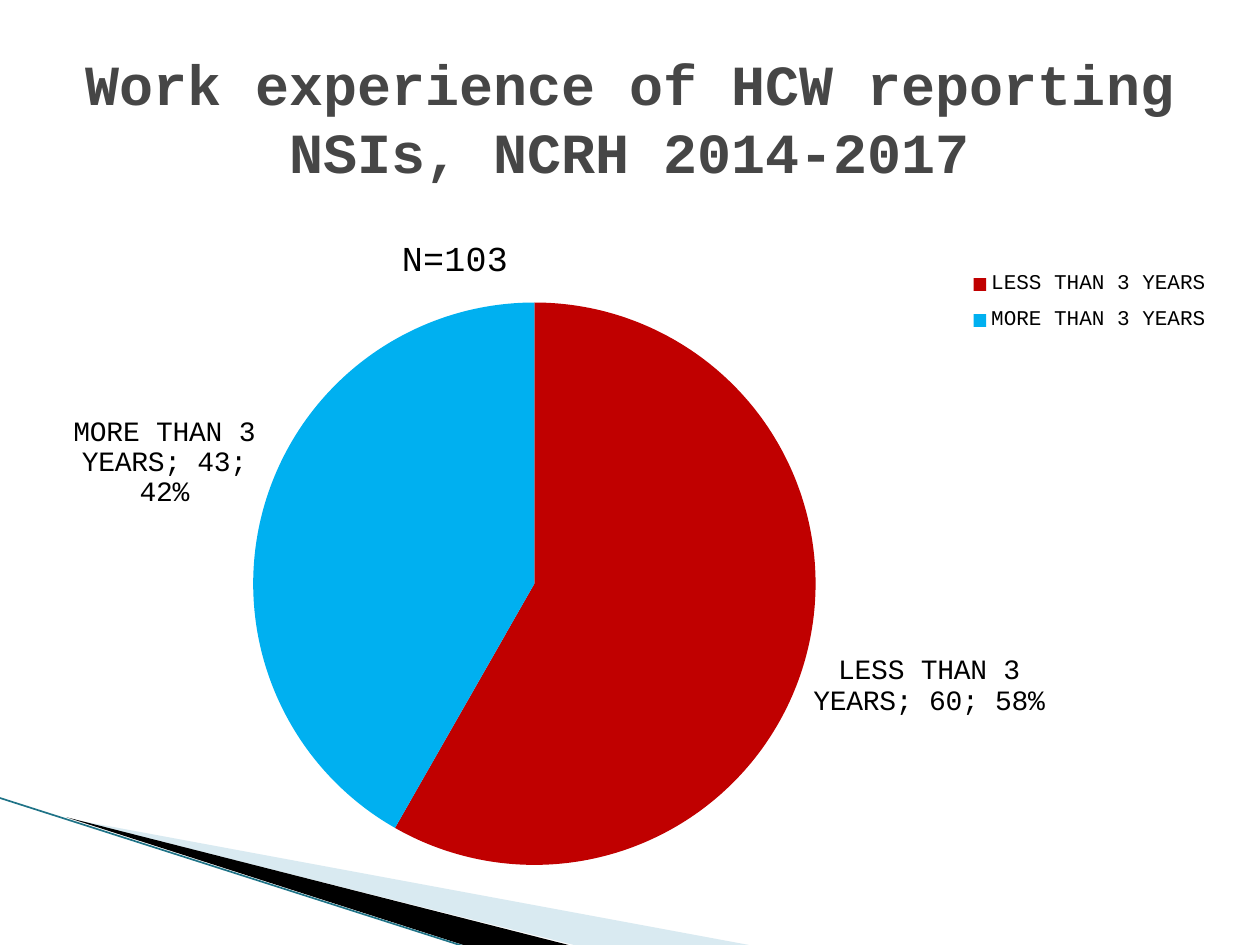
"""Builds a slide with a pie chart of work experience among reporting staff."""
from lxml import etree
from pptx import Presentation
from pptx import util as u
from pptx.chart.data import CategoryChartData
from pptx.dml.color import RGBColor
from pptx.enum import chart as ch, shapes, text
from pptx.oxml import parse_xml
from pptx.oxml.ns import nsdecls, qn

FONT = "Courier New"
COLORS = {
    "title": "464646",
    "text": "000000",
    "less": "C00000",
    "more": "00B0F0",
    "pale": "A0CBDC",
    "dark": "000000",
    "edge": "1F7387",
}


def rgb(name):
    return RGBColor.from_string(COLORS[name])


def set_font(font, size, color="text", bold=False):
    font.name, font.size, font.bold = FONT, u.Pt(size), bold
    font.color.rgb = rgb(color)


def add_wedge(s, points, color, alpha=None):
    builder = s.shapes.build_freeform(*points[0], scale=u.Pt(1))
    builder.add_line_segments(points[1:], close=True)
    sp = builder.convert_to_shape()
    sp.shadow.inherit = False
    sp.fill.solid()
    sp.fill.fore_color.rgb = rgb(color)
    sp.line.fill.background()
    if alpha:
        clr = sp._element.spPr.find(".//" + qn("a:srgbClr"))
        etree.SubElement(clr, qn("a:alpha")).set("val", str(alpha * 1000))


def add_edge(s, start, end):
    line = s.shapes.add_connector(
        shapes.MSO_CONNECTOR.STRAIGHT, *map(u.Pt, start + end))
    line.line.color.rgb = rgb("edge")
    line.line.width = u.Pt(0.95)
    etree.SubElement(line._element.spPr, qn("a:effectLst"))


def add_title(s, wording):
    tf = s.shapes.add_textbox(*map(u.Pt, (36, 21.6, 648, 90))).text_frame
    tf.word_wrap = True
    tf.vertical_anchor = text.MSO_ANCHOR.MIDDLE
    p = tf.paragraphs[0]
    p.text = wording
    p.alignment = text.PP_ALIGN.CENTER
    set_font(p.font, 32.4, "title", True)


def place(element, index, **box):
    """Gives a chart part a manual layout in fractions of the chart."""
    for old in element.findall(qn("c:layout")):
        element.remove(old)
    target = '<c:layoutTarget val="inner"/>' if index == 0 else ""
    modes = '<c:xMode val="edge"/><c:yMode val="edge"/>'
    values = "".join(f'<c:{k} val="{v}"/>' for k, v in box.items())
    element.insert(index, parse_xml(
        f'<c:layout {nsdecls("c")}><c:manualLayout>{target}{modes}{values}'
        "</c:manualLayout></c:layout>"))


def add_pie(s, title, values, colors):
    data = CategoryChartData()
    data.categories = list(values)
    data.add_series("Series 1", list(values.values()))
    chart = s.shapes.add_chart(
        ch.XL_CHART_TYPE.PIE, *map(u.Pt, (12.24, 116.64, 689.76, 401.76)),
        data).chart
    set_font(chart.font, 10)

    chart.has_title = True
    p = chart.chart_title.text_frame.paragraphs[0]
    p.text = title
    set_font(p.font, 20)

    chart.has_legend = True
    chart.legend.position = ch.XL_LEGEND_POSITION.RIGHT
    chart.legend.include_in_layout = False
    set_font(chart.legend.font, 12)

    plot = chart.plots[0]
    plot.vary_by_categories = True
    for i, color in enumerate(colors):
        fill = plot.series[0].points[i].format.fill
        fill.solid()
        fill.fore_color.rgb = rgb(color)
    labels = plot.series[0].data_labels
    labels.show_category_name = labels.show_value = True
    labels.show_percentage = True
    labels.position = ch.XL_LABEL_POSITION.OUTSIDE_END
    set_font(labels.font, 16)

    root = chart._chartSpace.find(qn("c:chart"))
    place(root.find(qn("c:title")), 1, x=0.31, y=0.04)
    place(root.find(qn("c:plotArea")), 0, x=0.19, y=0.14, w=0.47, h=0.8)
    place(root.find(qn("c:legend")), 1, x=0.78, y=0.08, w=0.21, h=0.12)


def main():
    prs = Presentation()
    prs.slide_width, prs.slide_height = u.Pt(720), u.Pt(540)
    s = prs.slides.add_slide(prs.slide_layouts[6])
    add_wedge(s, [(39.6, 468.5), (428.4, 540.5), (328.3, 540.5)], "pale", 40)
    add_wedge(s, [(38.2, 467.3), (329, 540.7), (267.8, 541.4)], "dark")
    add_edge(s, (-0.7, 455.8), (267.1, 541.4))
    add_title(s, "Work experience of HCW reporting NSIs, NCRH 2014-2017")
    add_pie(s, "N=103", {"LESS THAN 3 YEARS": 60, "MORE THAN 3 YEARS": 43},
            ("less", "more"))
    prs.save("out.pptx")


if __name__ == "__main__":
    main()
